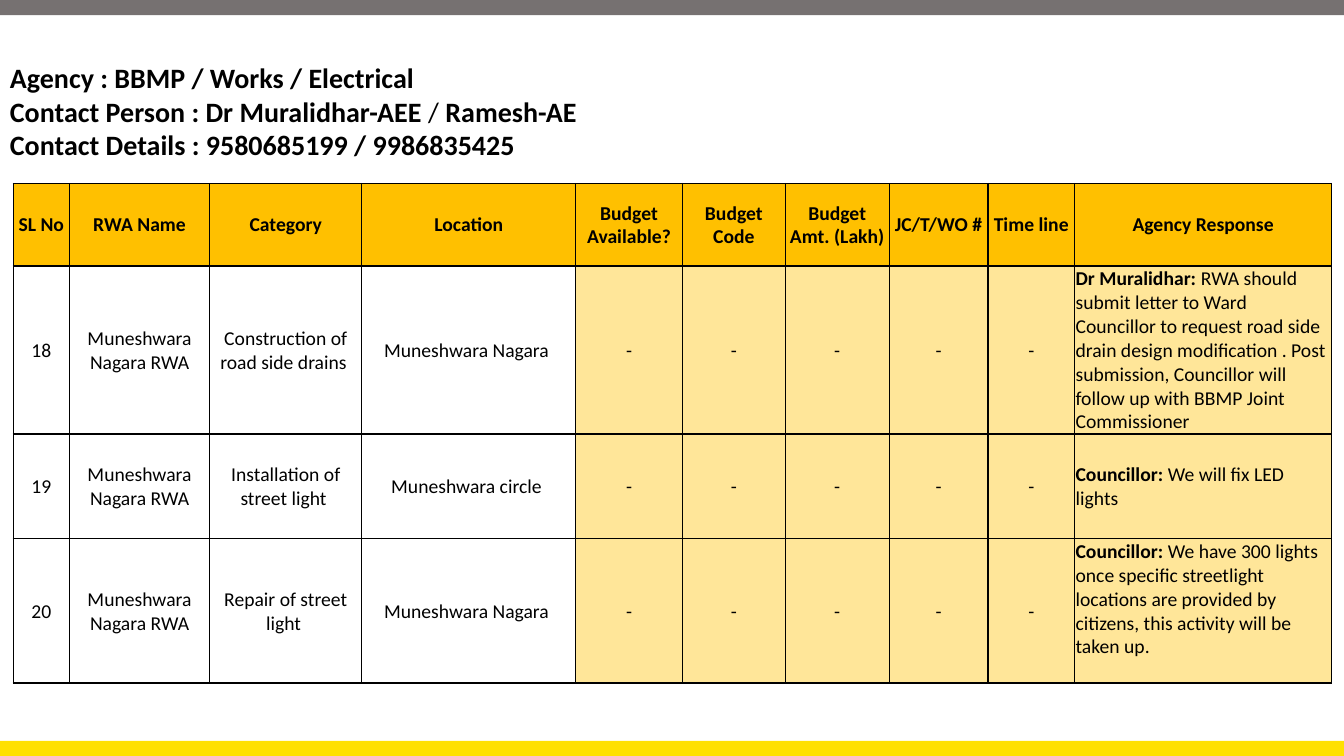
from lxml.etree import SubElement
from pptx import Presentation
from pptx.dml.color import RGBColor
from pptx.enum.shapes import MSO_SHAPE
from pptx.enum.text import MSO_ANCHOR, PP_ALIGN
from pptx.oxml.ns import qn
from pptx.util import Inches, Pt

WIDTH, HEIGHT = 13.33, 7.5
BAR_HEIGHT = HEIGHT * 0.02
FONT = "Calibri"
BLACK, GREY, YELLOW = "000000", "767171", "FFE000"
AMBER, PALE_AMBER = "FFC000", "FFE699"

COLUMNS = [0.56, 1.39, 1.51, 2.12, 1.06, 1.02, 1.03, 0.98, 0.86, 2.55]
ROWS = [0.82, 1.66, 1.04, 1.43]
FIRST_AGENCY_COLUMN = 4
HEADERS = ["SL No", "RWA Name", "Category", "Location", "Budget Available?",
           "Budget Code", "Budget Amt. (Lakh)", "JC/T/WO #", "Time line",
           "Agency Response"]
RWA = "Muneshwara Nagara RWA"
REQUESTS = [
    ("18", RWA, "Construction of road side drains ", "Muneshwara Nagara ",
     "Dr Muralidhar: ",
     "RWA should submit letter to Ward Councillor to request road side drain "
     "design modification . Post submission, Councillor will follow up with "
     "BBMP Joint Commissioner", MSO_ANCHOR.MIDDLE),
    ("19", RWA, "Installation of street light ", "Muneshwara circle ",
     "Councillor: ", "We will fix LED lights", MSO_ANCHOR.MIDDLE),
    ("20", RWA, "Repair of street light ", "Muneshwara Nagara ",
     "Councillor: ",
     "We have 300 lights once specific streetlight locations are provided by "
     "citizens, this activity will be taken up.", MSO_ANCHOR.TOP),
]
HEADING = [
    [("Agency : BBMP / Works / Electrical", True)],
    [("Contact Person : Dr Muralidhar-AEE ", True), ("/ ", False),
     ("Ramesh-AE", True)],
    [("Contact Details : 9580685199 / 9986835425", True)],
]


def paint(fill, color):
    fill.solid()
    fill.fore_color.rgb = RGBColor.from_string(color)


def write(para, spans, size, align=PP_ALIGN.LEFT):
    para.alignment = align
    para.font.name = FONT
    para.font.size = Pt(size)
    para.font.color.rgb = RGBColor.from_string(BLACK)
    for text, bold in spans:
        span = para.add_run()
        span.text = text
        span.font.bold = bold


def add_bar(page, top, color):
    bar = page.shapes.add_shape(MSO_SHAPE.RECTANGLE, 0, Inches(top),
                                Inches(WIDTH), Inches(BAR_HEIGHT))
    bar.shadow.inherit = False
    paint(bar.fill, color)
    bar.line.fill.background()


def add_heading(page, left, top, width, height):
    box = page.shapes.add_textbox(*map(Inches, (left, top, width, height)))
    frame = box.text_frame
    frame.word_wrap = True
    frame.margin_top = Inches(0.42)
    for index, spans in enumerate(HEADING):
        para = frame.add_paragraph() if index else frame.paragraphs[0]
        write(para, spans, 20)


def add_borders(cell):
    properties = cell._tc.get_or_add_tcPr()
    for position, side in enumerate(("lnL", "lnR", "lnT", "lnB")):
        line = SubElement(properties, qn(f"a:{side}"), w=str(Pt(1)))
        SubElement(SubElement(line, qn("a:solidFill")), qn("a:srgbClr"),
                   val=BLACK)
        properties.remove(line)
        properties.insert(position, line)


def fill_cell(cell, spans, color, align=PP_ALIGN.CENTER,
              anchor=MSO_ANCHOR.MIDDLE):
    cell.margin_left = cell.margin_right = cell.margin_top = Inches(0.01)
    cell.margin_bottom = 0
    cell.vertical_anchor = anchor
    if color:
        paint(cell.fill, color)
    else:
        cell.fill.background()
    add_borders(cell)
    write(cell.text_frame.paragraphs[0], spans, 14, align)


def add_requests(page, left, top):
    table = page.shapes.add_table(
        len(ROWS), len(COLUMNS), Inches(left), Inches(top),
        Inches(sum(COLUMNS)), Inches(sum(ROWS))).table
    for column, width in zip(table.columns, COLUMNS):
        column.width = Inches(width)
    for row, height in zip(table.rows, ROWS):
        row.height = Inches(height)
    for column, header in enumerate(HEADERS):
        fill_cell(table.cell(0, column), [(header, True)], AMBER)
    last = len(COLUMNS) - 1
    for row, request in enumerate(REQUESTS, 1):
        *details, speaker, response, anchor = request
        for column, text in enumerate(details):
            fill_cell(table.cell(row, column), [(text, False)], None)
        for column in range(FIRST_AGENCY_COLUMN, last):
            fill_cell(table.cell(row, column), [("-", False)], PALE_AMBER)
        fill_cell(table.cell(row, last), [(speaker, True), (response, False)],
                  PALE_AMBER, PP_ALIGN.LEFT, anchor)


def main():
    deck = Presentation()
    deck.slide_width, deck.slide_height = Inches(WIDTH), Inches(HEIGHT)
    page = deck.slides.add_slide(deck.slide_layouts[6])
    add_bar(page, HEIGHT - BAR_HEIGHT, YELLOW)
    add_bar(page, 0, GREY)
    add_requests(page, 0.13, 1.82)
    add_heading(page, 0, 0.18, WIDTH, 1.48)
    deck.save("out.pptx")


if __name__ == "__main__":
    main()
